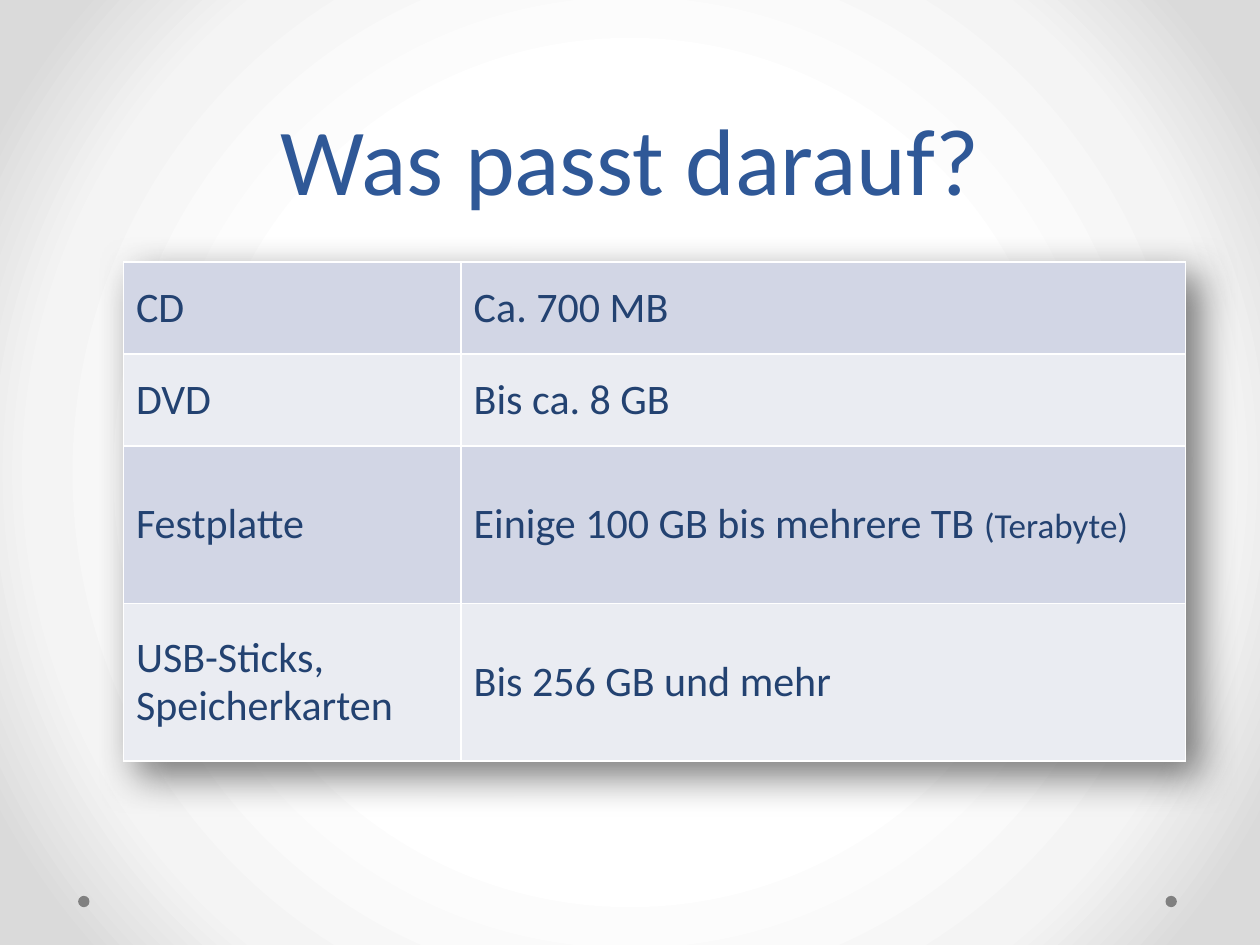
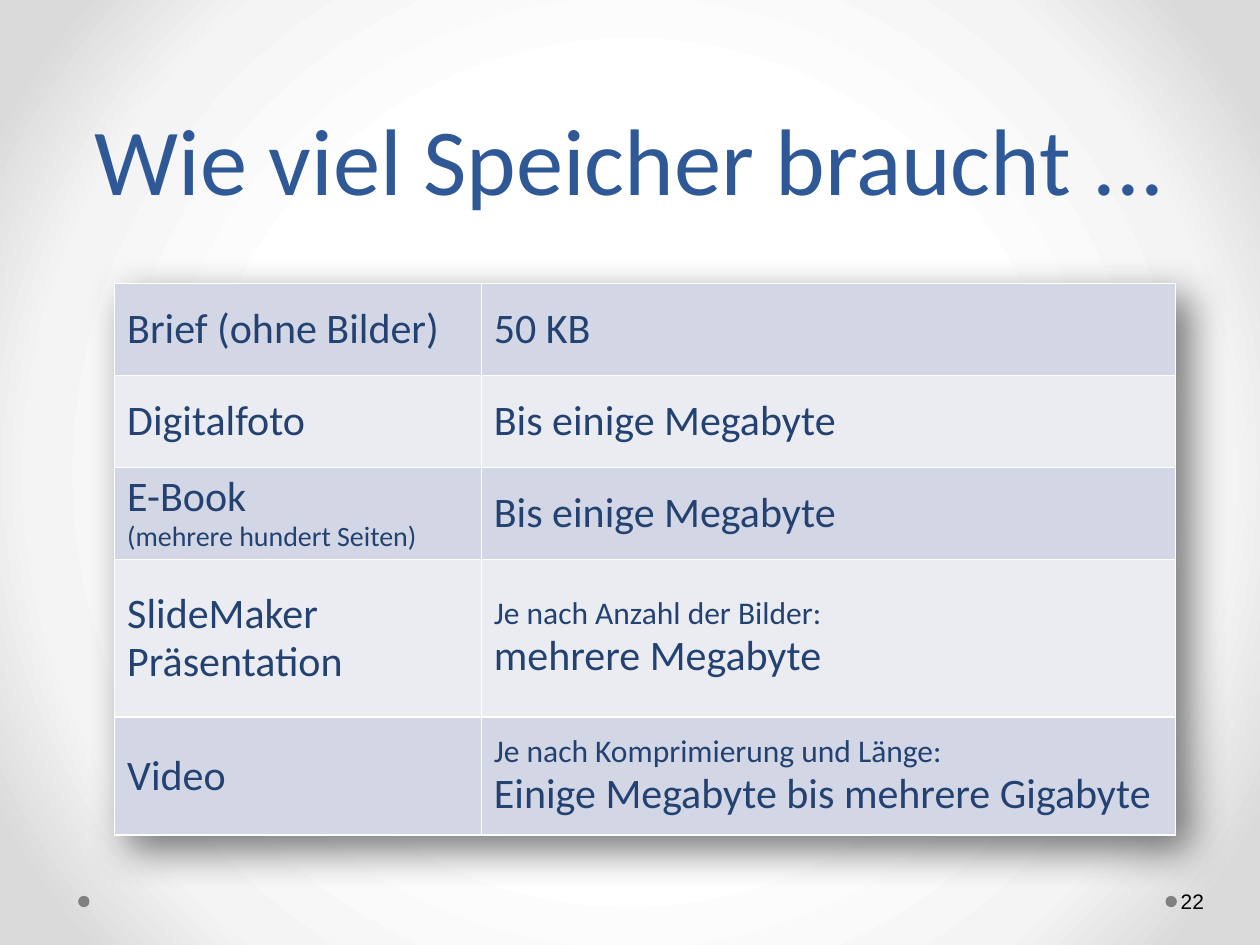
from dataclasses import dataclass

from lxml.etree import SubElement
from pptx import Presentation
from pptx.dml.color import RGBColor
from pptx.enum.shapes import MSO_SHAPE
from pptx.enum.text import MSO_ANCHOR, MSO_AUTO_SIZE, PP_ALIGN
from pptx.oxml import parse_xml
from pptx.oxml.ns import nsdecls, qn
from pptx.slide import Slide, SlideLayout
from pptx.table import _Cell
from pptx.text.text import _Run
from pptx.util import Emu, Inches, Pt

SLIDE_WIDTH, SLIDE_HEIGHT = Inches(10), Inches(7.5)

TITLE_BLUE = RGBColor(0x2F, 0x58, 0x97)
TEXT_BLUE = RGBColor(0x23, 0x42, 0x71)
ROW_DARK = RGBColor(0xD2, 0xD6, 0xE5)
ROW_LIGHT = RGBColor(0xEA, 0xEC, 0xF2)
DOT_GREY = RGBColor(0x80, 0x80, 0x80)
BLACK = RGBColor(0, 0, 0)
WHITE = RGBColor(0xFF, 0xFF, 0xFF)
SHADOW_GREY = RGBColor(0x33, 0x33, 0x33)
BACKGROUND_STOPS = (
    (50, WHITE),
    (76, RGBColor(0xF4, 0xF4, 0xF4)),
    (92, RGBColor(0xDA, 0xDA, 0xDA)),
)

FONT = "Calibri"
NUMBER_FONT = "Arial"
DOT_LEFTS = (92.5, 6.2)
LOW_ROW, TALL_ROW = 9.73, 16.67


@dataclass(frozen=True)
class Part:
    """A stretch of cell text in one size."""

    text: str
    size: int = 24
    starts_line: bool = False


CellText = tuple[Part, ...]


@dataclass(frozen=True)
class StorageTable:
    """Places and sizes are percentages of the slide's width or height."""

    left: float
    top: float
    columns: tuple[float, ...]
    rows: tuple[float, ...]
    cells: tuple[tuple[CellText, ...], ...]


@dataclass(frozen=True)
class StorageSlide:
    title: str
    table: StorageTable
    number: str = ""


SLIDES = (
    StorageSlide(
        "Was passt darauf?",
        StorageTable(
            left=9.8,
            top=27.73,
            columns=(26.8, 57.5),
            rows=(LOW_ROW, LOW_ROW, TALL_ROW, TALL_ROW),
            cells=(
                ((Part("CD"),), (Part("Ca. 700 MB"),)),
                ((Part("DVD"),), (Part("Bis ca. 8 GB"),)),
                (
                    (Part("Festplatte"),),
                    (Part("Einige 100 GB bis mehrere TB "), Part("(Terabyte)", 20)),
                ),
                ((Part("USB-Sticks, Speicherkarten"),), (Part("Bis 256 GB und mehr"),)),
            ),
        ),
    ),
    StorageSlide(
        "Wie viel Speicher braucht ...",
        StorageTable(
            left=9.1,
            top=30,
            columns=(29.1, 55.1),
            rows=(LOW_ROW, LOW_ROW, LOW_ROW, TALL_ROW, 12.53),
            cells=(
                ((Part("Brief (ohne Bilder)"),), (Part("50 KB"),)),
                ((Part("Digitalfoto"),), (Part("Bis einige Megabyte"),)),
                (
                    (Part("E-Book"), Part("(mehrere hundert Seiten)", 16, True)),
                    (Part("Bis einige Megabyte"),),
                ),
                (
                    (Part("SlideMaker Präsentation"),),
                    (
                        Part("Je nach Anzahl der Bilder:", 18),
                        Part("mehrere Megabyte", starts_line=True),
                    ),
                ),
                (
                    (Part("Video"),),
                    (
                        Part("Je nach Komprimierung und Länge:", 18),
                        Part("Einige Megabyte bis mehrere Gigabyte", starts_line=True),
                    ),
                ),
            ),
        ),
        number="22",
    ),
)


def across(percent: float) -> Emu:
    return Emu(round(SLIDE_WIDTH * percent / 100))


def down(percent: float) -> Emu:
    return Emu(round(SLIDE_HEIGHT * percent / 100))


def style_run(run: _Run, size: float, color: RGBColor, font: str = FONT) -> None:
    run.font.size = Pt(size)
    run.font.name = font
    run.font.color.rgb = color


def set_background(layout: SlideLayout) -> None:
    layout.background.fill.gradient()
    stops = "".join(
        f'<a:gs pos="{position * 1000}"><a:srgbClr val="{color}"/></a:gs>'
        for position, color in BACKGROUND_STOPS
    )
    radial = parse_xml(
        f'<a:gradFill {nsdecls("a")} rotWithShape="1"><a:gsLst>{stops}</a:gsLst>'
        '<a:path path="circle"><a:fillToRect l="50000" t="50000" r="50000" b="50000"/>'
        "</a:path></a:gradFill>"
    )
    linear = next(layout.element.iter(qn("a:gradFill")))
    linear.getparent().replace(linear, radial)


def move_dots_to_layout(slide: Slide, layout: SlideLayout) -> None:
    """Draw the footer dots and hand them to the layout, which all slides share."""
    for dot_id, left in enumerate(DOT_LEFTS, start=101):
        dot = slide.shapes.add_shape(
            MSO_SHAPE.OVAL, across(left), down(94.8), across(0.9), down(1.2)
        )
        dot.shadow.inherit = False
        dot.fill.solid()
        dot.fill.fore_color.rgb = DOT_GREY
        dot.line.fill.background()
        dot.element.nvSpPr.cNvPr.set("id", str(dot_id))
        layout.shapes.element.append(dot.element)


def place_layout_title(layout: SlideLayout) -> None:
    title = layout.placeholders[0]
    title.left, title.top = across(5), 0
    title.width, title.height = across(90), down(23.33)


def add_title(slide: Slide, text: str) -> None:
    frame = slide.shapes.title.text_frame
    frame.text = text
    frame.auto_size = MSO_AUTO_SIZE.NONE
    frame.vertical_anchor = MSO_ANCHOR.BOTTOM
    paragraph = frame.paragraphs[0]
    paragraph.alignment = PP_ALIGN.CENTER
    paragraph.line_spacing = Pt(58)
    style_run(paragraph.runs[0], 54, TITLE_BLUE)


def add_number(slide: Slide, number: str) -> None:
    box = slide.shapes.add_textbox(across(93.4), down(92.67), across(6.1), down(5.33))
    frame = box.text_frame
    frame.word_wrap = True
    frame.vertical_anchor = MSO_ANCHOR.MIDDLE
    frame.margin_left, frame.margin_right = Inches(0.03), Inches(0.05)
    frame.text = number
    style_run(frame.paragraphs[0].runs[0], 12, BLACK, NUMBER_FONT)


def add_borders(cell: _Cell) -> None:
    properties = cell._tc.get_or_add_tcPr()
    for side in ("lnL", "lnR", "lnT", "lnB"):
        line = SubElement(properties, qn(f"a:{side}"), w=str(Pt(1)))
        fill = SubElement(line, qn("a:solidFill"))
        SubElement(fill, qn("a:srgbClr"), val=str(WHITE))


def fill_cell(cell: _Cell, parts: CellText, color: RGBColor) -> None:
    add_borders(cell)
    cell.fill.solid()
    cell.fill.fore_color.rgb = color
    cell.vertical_anchor = MSO_ANCHOR.MIDDLE
    paragraph = cell.text_frame.paragraphs[0]
    paragraph.line_spacing = 0.93
    for part in parts:
        if part.starts_line:
            paragraph.add_line_break()
        run = paragraph.add_run()
        run.text = part.text
        style_run(run, part.size, TEXT_BLUE)


def add_storage_table(slide: Slide, content: StorageTable) -> None:
    frame = slide.shapes.add_table(
        len(content.rows),
        len(content.columns),
        across(content.left),
        down(content.top),
        across(sum(content.columns)),
        down(sum(content.rows)),
    )
    table = frame.table
    table.first_row = table.horz_banding = False
    for column, width in zip(table.columns, content.columns):
        column.width = across(width)
    for index, (row, height) in enumerate(zip(table.rows, content.rows)):
        row.height = down(height)
        color = ROW_LIGHT if index % 2 else ROW_DARK
        for cell, parts in zip(row.cells, content.cells[index]):
            fill_cell(cell, parts, color)
    shadow = parse_xml(
        f'<a:effectLst {nsdecls("a")}><a:outerShdw blurRad="{Pt(23)}" dist="{Pt(11)}" '
        f'dir="2700000" algn="tl" rotWithShape="0"><a:srgbClr val="{SHADOW_GREY}">'
        '<a:alpha val="65000"/></a:srgbClr></a:outerShdw></a:effectLst>'
    )
    table._tbl.tblPr.insert(0, shadow)


def main() -> None:
    presentation = Presentation()
    presentation.slide_width, presentation.slide_height = SLIDE_WIDTH, SLIDE_HEIGHT
    layout = presentation.slide_layouts.get_by_name("Title Only")
    set_background(layout)
    place_layout_title(layout)
    for content in SLIDES:
        slide = presentation.slides.add_slide(layout)
        add_title(slide, content.title)
        if content.number:
            add_number(slide, content.number)
        add_storage_table(slide, content.table)
    move_dots_to_layout(presentation.slides[0], layout)
    presentation.save("out.pptx")


if __name__ == "__main__":
    main()
